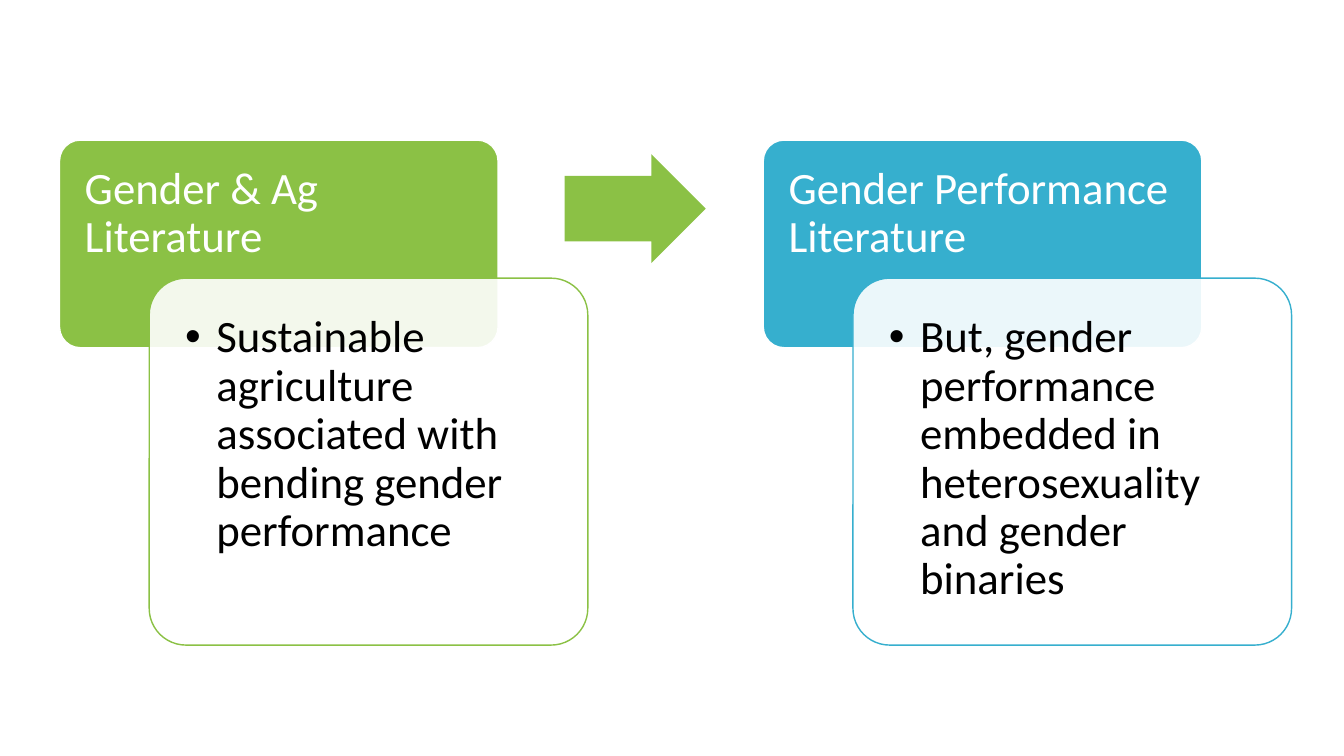
from lxml import etree
from pptx import Presentation
from pptx.dml.color import RGBColor
from pptx.enum.shapes import MSO_SHAPE
from pptx.enum.text import MSO_ANCHOR, PP_ALIGN
from pptx.oxml.ns import qn
from pptx.util import Inches, Pt

ROUND_RECT = MSO_SHAPE.ROUNDED_RECTANGLE
RIGHT_ARROW = MSO_SHAPE.RIGHT_ARROW
TOP = MSO_ANCHOR.TOP
LEFT = PP_ALIGN.LEFT

GREEN = RGBColor(0x8B, 0xC1, 0x45)
BLUE = RGBColor(0x36, 0xAF, 0xCE)
WHITE = RGBColor(0xFF, 0xFF, 0xFF)
BLACK = RGBColor(0x00, 0x00, 0x00)

FONT = "Calibri"
BOX_WIDTH = 4.35
HEADING_TOP, HEADING_HEIGHT = 1.39, 2.06
CARD_TOP, CARD_HEIGHT = 2.76, 3.64
CARD_SHIFT = 0.89
FIRST_LEFT, STAGE_STEP = 0.59, 6.98

STAGES = [
    ("Gender & Ag Literature",
     "Sustainable agriculture associated with bending gender performance",
     GREEN),
    ("Gender Performance Literature",
     "But, gender performance embedded in heterosexuality and gender binaries",
     BLUE),
]


def add_box(slide, kind, left, top, width, height, fill, line=None):
    s = slide.shapes.add_shape(kind, Inches(left), Inches(top),
                               Inches(width), Inches(height))
    s.shadow.inherit = False
    s.fill.solid()
    s.fill.fore_color.rgb = fill
    if line is None:
        s.line.fill.background()
    else:
        s.line.color.rgb = line
        s.line.width = Pt(1)
    return s


def set_opacity(s, percent):
    color = s.fill._xPr.find(qn("a:solidFill"))[0]
    etree.SubElement(color, qn("a:alpha"), val=str(percent * 1000))


def add_bullet(p):
    pPr = p._p.get_or_add_pPr()
    pPr.set("marL", str(Inches(0.31)))
    pPr.set("indent", str(-Inches(0.31)))
    etree.SubElement(pPr, qn("a:buFont"), typeface="Arial")
    etree.SubElement(pPr, qn("a:buChar"), char="•")


def write_text(s, text, color, inset):
    tf = s.text_frame
    tf.word_wrap = True
    tf.vertical_anchor = TOP
    tf.margin_left = tf.margin_right = Inches(inset)
    tf.margin_top = tf.margin_bottom = Inches(inset)
    p = tf.paragraphs[0]
    p.alignment = LEFT
    p.line_spacing = 0.9
    r = p.add_run()
    r.text = text
    r.font.name = FONT
    r.font.size = Pt(32)
    r.font.color.rgb = color
    return p


def add_stage(slide, left, heading, finding, color):
    """Add a coloured heading with its overlapping, see-through card."""
    s = add_box(slide, ROUND_RECT, left, HEADING_TOP,
                BOX_WIDTH, HEADING_HEIGHT, color, WHITE)
    s.adjustments[0] = 0.1
    write_text(s, heading, WHITE, 0.19)

    s = add_box(slide, ROUND_RECT, left + CARD_SHIFT, CARD_TOP,
                BOX_WIDTH, CARD_HEIGHT, WHITE, color)
    s.adjustments[0] = 0.1
    set_opacity(s, 90)
    add_bullet(write_text(s, finding, BLACK, 0.25))


def add_arrow(slide):
    s = add_box(slide, RIGHT_ARROW, 5.6, 1.53, 1.4, 1.08, GREEN)
    s.adjustments[0] = 0.6
    s.adjustments[1] = 0.5


def main():
    prs = Presentation()
    prs.slide_width = Inches(13.33)
    prs.slide_height = Inches(7.5)
    slide = prs.slides.add_slide(prs.slide_layouts[6])
    for i, (heading, finding, color) in enumerate(STAGES):
        add_stage(slide, FIRST_LEFT + i * STAGE_STEP, heading, finding, color)
    add_arrow(slide)
    prs.save("out.pptx")


if __name__ == "__main__":
    main()
